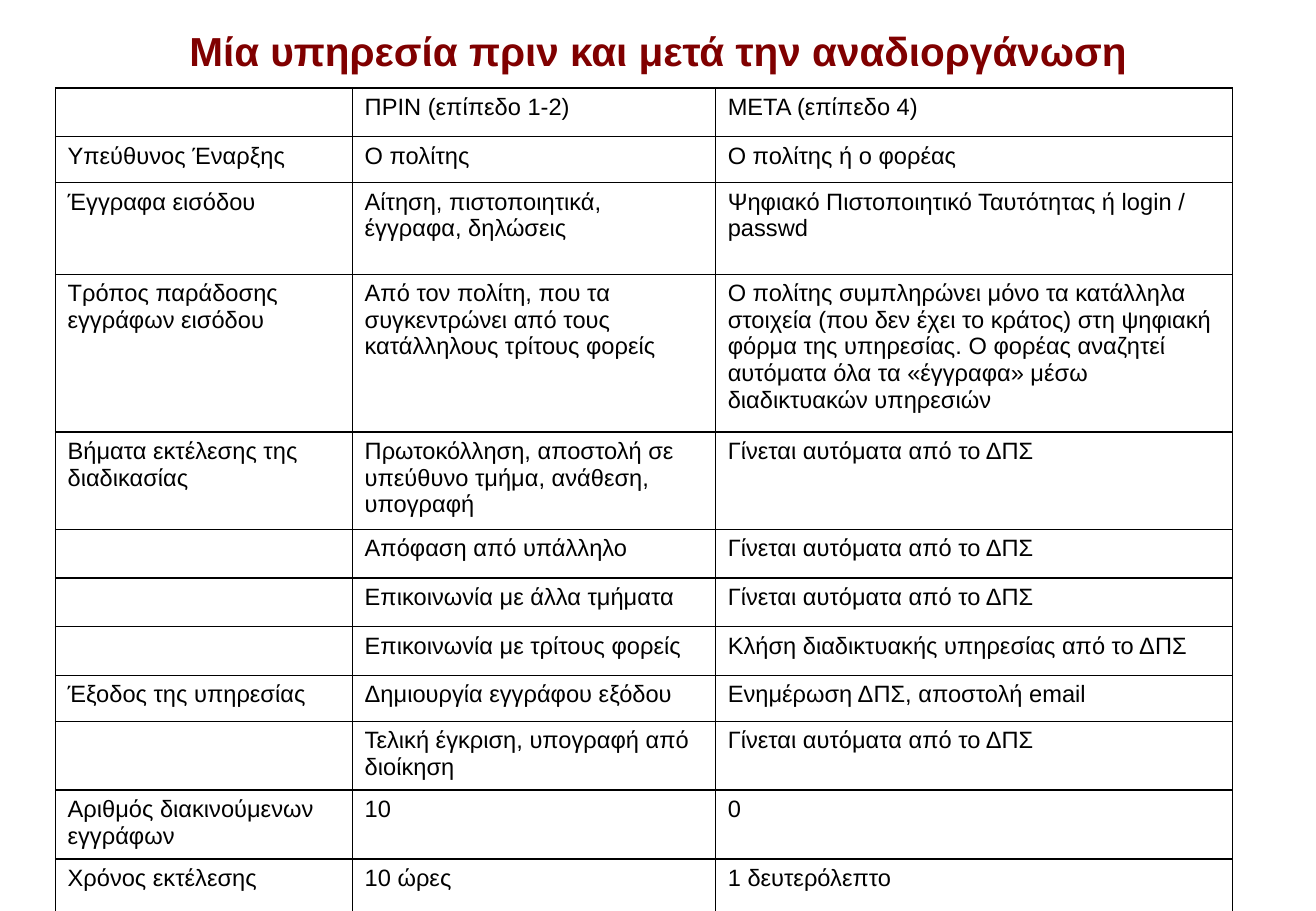
from dataclasses import dataclass

from pptx import Presentation
from pptx.dml.color import RGBColor as Rgb
from pptx.enum.text import MSO_ANCHOR as Anchor, PP_ALIGN as Align
from pptx.oxml import parse_xml
from pptx.oxml.ns import nsdecls
from pptx.slide import Slide
from pptx.table import _Cell as Cell
from pptx.text.text import TextFrame as Frame
from pptx.util import Cm, Pt


@dataclass(frozen=True)
class Theme:
    font: str = "Arial"
    title: str = "800000"
    ink: str = "000000"
    head: int = 24
    body: int = 14
    line: int = 1


@dataclass(frozen=True)
class Row:
    high: float
    step: str
    old: str
    new: str


THEME = Theme()
TITLE = "Μία υπηρεσία πριν και μετά την αναδιοργάνωση"
WIDTHS = (6.21, 7.59, 10.8)
# Row heights in cm
LOW, MID, TALL, FULL = 0.96, 1.39, 1.92, 3.3
AUTO = "Γίνεται αυτόματα από το ΔΠΣ"
ROWS = (
    Row(LOW, "", "ΠΡΙΝ (επίπεδο 1-2)", "ΜΕΤΑ (επίπεδο 4)"),
    Row(LOW, "Υπεύθυνος Έναρξης", "Ο πολίτης", "Ο πολίτης ή ο φορέας"),
    Row(TALL, "Έγγραφα εισόδου", "Αίτηση, πιστοποιητικά, έγγραφα, δηλώσεις",
        "Ψηφιακό Πιστοποιητικό Ταυτότητας ή login / passwd"),
    Row(FULL, "Τρόπος παράδοσης εγγράφων εισόδου",
        "Από τον πολίτη, που τα συγκεντρώνει από τους κατάλληλους τρίτους φορείς",
        "Ο πολίτης συμπληρώνει μόνο τα κατάλληλα στοιχεία (που δεν έχει το "
        "κράτος) στη ψηφιακή φόρμα της υπηρεσίας. Ο φορέας αναζητεί αυτόματα "
        "όλα τα «έγγραφα» μέσω διαδικτυακών υπηρεσιών"),
    Row(TALL, "Βήματα εκτέλεσης της διαδικασίας",
        "Πρωτοκόλληση, αποστολή σε υπεύθυνο τμήμα, ανάθεση, υπογραφή", AUTO),
    Row(LOW, "", "Απόφαση από υπάλληλο", AUTO),
    Row(LOW, "", "Επικοινωνία με άλλα τμήματα", AUTO),
    Row(LOW, "", "Επικοινωνία με τρίτους φορείς",
        "Κλήση διαδικτυακής υπηρεσίας από το ΔΠΣ"),
    Row(LOW, "Έξοδος της υπηρεσίας", "Δημιουργία εγγράφου εξόδου",
        "Ενημέρωση ΔΠΣ, αποστολή email"),
    Row(MID, "", "Τελική έγκριση, υπογραφή από διοίκηση", AUTO),
    Row(MID, "Αριθμός διακινούμενων εγγράφων", "10", "0"),
    Row(MID, "Χρόνος εκτέλεσης", "10 ώρες", "1 δευτερόλεπτο"),
)


def write(frame: Frame, text: str, *, size: int = THEME.body,
          color: str = THEME.ink, bold: bool = False,
          align: Align = Align.LEFT) -> None:
    frame.word_wrap = True
    para = frame.paragraphs[0]
    para.alignment = align
    run = para.add_run()
    run.text = text
    run.font.name = THEME.font
    run.font.size = Pt(size)
    run.font.bold = bold
    run.font.color.rgb = Rgb.from_string(color)


def edge(cell: Cell) -> None:
    props = cell._tc.get_or_add_tcPr()
    for spot, side in enumerate(("lnL", "lnR", "lnT", "lnB")):
        props.insert(spot, parse_xml(
            f'<a:{side} {nsdecls("a")} w="{Pt(THEME.line)}"><a:solidFill>'
            f'<a:srgbClr val="{THEME.ink}"/></a:solidFill></a:{side}>'))


def head(slide: Slide) -> None:
    box = slide.shapes.add_textbox(Cm(0.36), Cm(0.2), Cm(26.8), Cm(1.7))
    box.text_frame.vertical_anchor = Anchor.MIDDLE
    write(box.text_frame, TITLE, size=THEME.head, color=THEME.title,
          bold=True, align=Align.CENTER)


def grid(slide: Slide) -> None:
    table = slide.shapes.add_table(
        len(ROWS), len(WIDTHS), Cm(1.16), Cm(1.84),
        Cm(sum(WIDTHS)), Cm(sum(row.high for row in ROWS))).table
    table.first_row = table.horz_banding = False
    for col, wide in zip(table.columns, WIDTHS):
        col.width = Cm(wide)
    for line, row in zip(table.rows, ROWS):
        line.height = Cm(row.high)
        for cell, text in zip(line.cells, (row.step, row.old, row.new)):
            cell.fill.background()
            edge(cell)
            write(cell.text_frame, text)


def main() -> None:
    deck = Presentation()
    deck.slide_width, deck.slide_height = Cm(27.51), Cm(19.05)
    slide = deck.slides.add_slide(deck.slide_layouts[6])
    # Title
    head(slide)
    # Before and after table
    grid(slide)
    deck.save("out.pptx")


if __name__ == "__main__":
    main()
